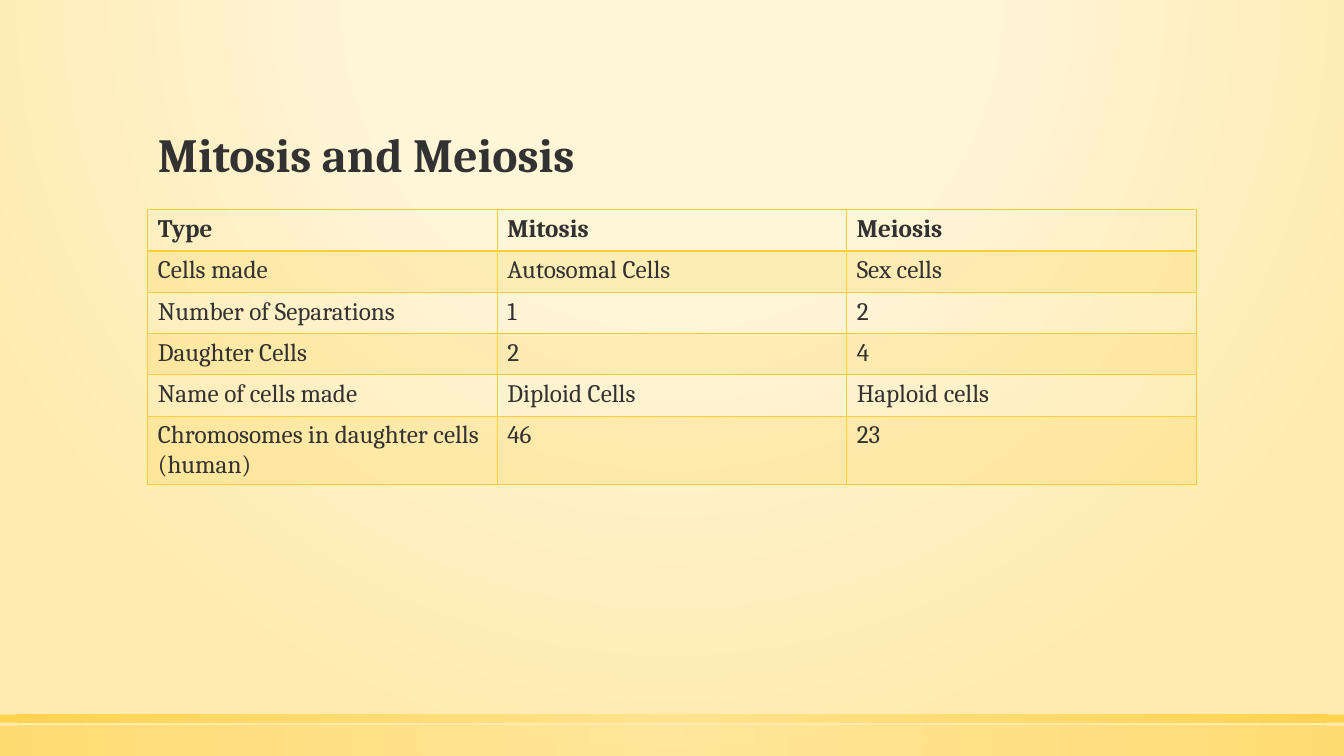
from dataclasses import dataclass

from pptx import Presentation
from pptx.dml.color import RGBColor
from pptx.enum.shapes import MSO_SHAPE
from pptx.enum.text import MSO_ANCHOR, MSO_AUTO_SIZE, PP_ALIGN
from pptx.oxml import parse_xml
from pptx.oxml.ns import nsdecls
from pptx.util import Inches, Pt

TITLE = "Mitosis and Meiosis"
ROWS = [
    ("Type", "Mitosis", "Meiosis"),
    ("Cells made", "Autosomal Cells", "Sex cells"),
    ("Number of Separations", "1", "2"),
    ("Daughter Cells", "2", "4"),
    ("Name of cells made", "Diploid Cells", "Haploid cells"),
    ("Chromosomes in daughter cells (human)", "46", "23"),
]


@dataclass(frozen=True)
class Theme:
    font: str = "Cambria"
    text: str = "323232"
    gold: str = "FFCD36"
    pale_gold: str = "FFE186"
    cream: str = "FFF5D7"
    sand: str = "FFEBAF"
    title_size: int = 34
    table_size: int = 18
    band_alpha: int = 20
    border: int = 1
    header_border: int = 2


THEME = Theme()
WIDTH, HEIGHT = 13.33, 7.5
MARGIN = 0.11 * WIDTH
CONTENT_WIDTH = WIDTH - 2 * MARGIN
TITLE_TOP, TITLE_HEIGHT = 0.51, 1.35
TABLE_TOP, ROW_HEIGHT, LAST_ROW_HEIGHT = 2.08, 0.41, 0.68
# top, height and opacity of the footer bands
FOOTER_BANDS = [(0.96 * HEIGHT, 0.04 * HEIGHT, 50), (7.09, 0.08, 80)]


def color_xml(color, alpha):
    return f'<a:srgbClr val="{color}"><a:alpha val="{alpha * 1000}"/></a:srgbClr>'


def set_radial_fill(element, stops, top=50, bottom=50):
    """Replace the element's first solid fill by a circular gradient."""
    solid = element.xpath(".//a:solidFill")[0]
    stop_xml = "".join(
        f'<a:gs pos="{position * 1000}">{color_xml(color, alpha)}</a:gs>'
        for position, color, alpha in stops
    )
    gradient = parse_xml(
        f'<a:gradFill {nsdecls("a")} rotWithShape="1"><a:gsLst>{stop_xml}</a:gsLst>'
        f'<a:path path="circle"><a:fillToRect l="50000" t="{top * 1000}" '
        f'r="50000" b="{bottom * 1000}"/></a:path></a:gradFill>'
    )
    solid.getparent().replace(solid, gradient)


def format_text(text_frame, size, bold):
    for paragraph in text_frame.paragraphs:
        for run in paragraph.runs:
            font = run.font
            font.name, font.size, font.bold = THEME.font, Pt(size), bold
            font.color.rgb = RGBColor.from_string(THEME.text)


def set_borders(cell, top, bottom):
    widths = {"L": THEME.border, "R": THEME.border, "T": top, "B": bottom}
    properties = cell._tc.get_or_add_tcPr()
    for index, (side, width) in enumerate(widths.items()):
        properties.insert(index, parse_xml(
            f'<a:ln{side} {nsdecls("a")} w="{Pt(width)}"><a:solidFill>'
            f'{color_xml(THEME.gold, 100)}</a:solidFill></a:ln{side}>'
        ))


def add_background(slide):
    slide.background.fill.solid()
    stops = [(0, THEME.cream, 59), (40, THEME.cream, 66), (100, THEME.sand, 100)]
    set_radial_fill(slide.element, stops, top=-80, bottom=180)


def add_footer_bands(slide):
    for top, height, alpha in FOOTER_BANDS:
        band = slide.shapes.add_shape(
            MSO_SHAPE.RECTANGLE, 0, Inches(top), Inches(WIDTH), Inches(height))
        band.shadow.inherit = False
        band.line.fill.background()
        band.fill.solid()
        set_radial_fill(
            band.element, [(0, THEME.pale_gold, alpha), (100, THEME.gold, alpha)])


def add_title(slide):
    title = slide.shapes.title
    title.left, title.top = Inches(MARGIN), Inches(TITLE_TOP)
    title.width, title.height = Inches(CONTENT_WIDTH), Inches(TITLE_HEIGHT)
    frame = title.text_frame
    frame.text = TITLE
    frame.vertical_anchor = MSO_ANCHOR.BOTTOM
    frame.auto_size = MSO_AUTO_SIZE.NONE
    paragraph = frame.paragraphs[0]
    paragraph.alignment, paragraph.line_spacing = PP_ALIGN.LEFT, 0.9
    format_text(frame, THEME.title_size, True)


def add_comparison_table(slide):
    heights = [ROW_HEIGHT] * (len(ROWS) - 1) + [LAST_ROW_HEIGHT]
    table = slide.shapes.add_table(
        len(ROWS), len(ROWS[0]), Inches(MARGIN), Inches(TABLE_TOP),
        Inches(CONTENT_WIDTH), Inches(sum(heights))).table
    table.horz_banding = False
    for row_index, (row, height) in enumerate(zip(ROWS, heights)):
        table.rows[row_index].height = Inches(height)
        is_header = row_index == 0
        for column_index, text in enumerate(row):
            cell = table.cell(row_index, column_index)
            cell.text = text
            format_text(cell.text_frame, THEME.table_size, is_header)
            if row_index % 2:
                cell.fill.solid()
                cell.fill.fore_color.rgb = RGBColor.from_string(THEME.gold)
                solid = cell._tc.tcPr.xpath("./a:solidFill")[0]
                solid.replace(solid[0], parse_xml(
                    color_xml(THEME.gold, THEME.band_alpha).replace(
                        "<a:srgbClr", f'<a:srgbClr {nsdecls("a")}', 1)))
            else:
                cell.fill.background()
            set_borders(
                cell,
                top=THEME.header_border if row_index == 1 else THEME.border,
                bottom=THEME.header_border if is_header else THEME.border)


def main():
    presentation = Presentation()
    presentation.slide_width, presentation.slide_height = Inches(WIDTH), Inches(HEIGHT)
    slide = presentation.slides.add_slide(presentation.slide_layouts.get_by_name("Title Only"))
    add_background(slide)
    add_footer_bands(slide)
    add_title(slide)
    add_comparison_table(slide)
    presentation.save("out.pptx")


if __name__ == "__main__":
    main()
